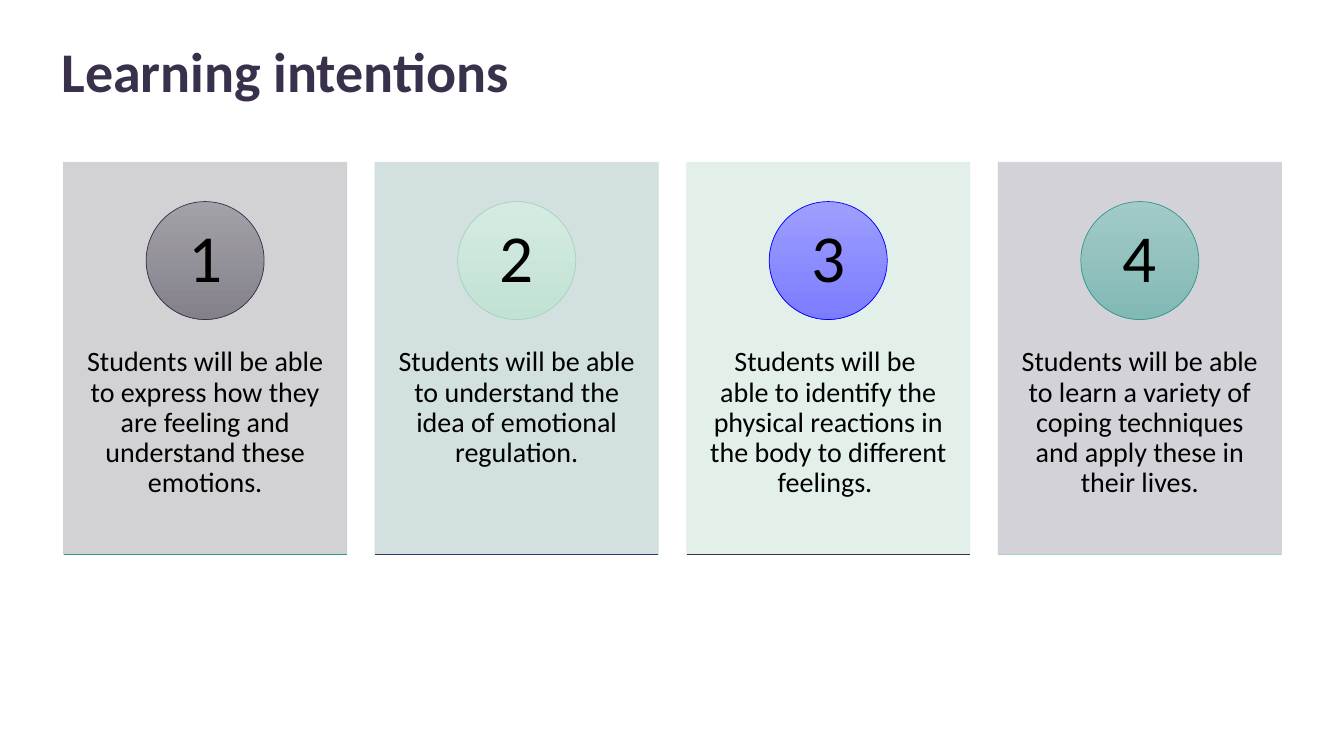
from dataclasses import dataclass

from lxml import etree
from pptx import Presentation
from pptx.dml.color import RGBColor
from pptx.enum.shapes import MSO_CONNECTOR, MSO_SHAPE
from pptx.enum.text import MSO_ANCHOR, MSO_AUTO_SIZE, PP_ALIGN
from pptx.oxml.ns import qn
from pptx.util import Inches, Pt

OVAL, RECT = MSO_SHAPE.OVAL, MSO_SHAPE.RECTANGLE
STRAIGHT = MSO_CONNECTOR.STRAIGHT
TOP, MIDDLE = MSO_ANCHOR.TOP, MSO_ANCHOR.MIDDLE
LEFT, CENTER = PP_ALIGN.LEFT, PP_ALIGN.CENTER
NO_AUTOFIT = MSO_AUTO_SIZE.NONE


@dataclass(frozen=True)
class Tone:
    top: str
    bottom: str
    line: str


@dataclass(frozen=True)
class Theme:
    font: str = "Calibri"
    title_color: str = "39304C"
    text_color: str = "000000"
    title_size: int = 40
    number_size: int = 48
    body_size: int = 20
    line_width: float = 0.5
    slate: Tone = Tone("A3A1A8", "84818B", "39304C")
    mint: Tone = Tone("D5EBE1", "C1E2D4", "A4D3BF")
    blue: Tone = Tone("9E9EFF", "7C7CFF", "0000FF")
    teal: Tone = Tone("A2CAC7", "82B9B5", "369691")
    violet: Tone = Tone("A6A1B4", "87819C", "45326C")


@dataclass(frozen=True)
class Card:
    text: str
    fill: str
    badge: Tone
    base: Tone


THEME = Theme()
CARDS = [
    Card("Students will be able to express how they are feeling and understand these emotions.",
         "CECDD0", THEME.slate, THEME.teal),
    Card("Students will be able to understand the idea of emotional regulation.",
         "CEDDDC", THEME.mint, THEME.violet),
    Card("Students will be \nable to identify the physical reactions in the body to different feelings. ",
         "E0EFE8", THEME.blue, THEME.slate),
    Card("Students will be able to learn a variety of coping techniques and apply these in their lives.",
         "CFCED4", THEME.teal, THEME.mint),
]

# Card grid, in inches
CARD_LEFT, CARD_TOP, CARD_W, CARD_H, PITCH = 0.63, 1.61, 2.81, 3.89, 3.09
BADGE_TOP, BADGE_SIZE = 2.0, 1.17
BODY_TOP, BODY_H = 3.09, 2.33


def rgb(value: str) -> RGBColor:
    return RGBColor.from_string(value)


def write(tf, text: str, size: int, color: str, anchor=TOP, align=CENTER,
          inset: tuple = (0.1, 0.05), bold: bool = False) -> None:
    side, end = (Inches(v) for v in inset)
    frame = {"word_wrap": True, "auto_size": NO_AUTOFIT, "vertical_anchor": anchor,
             "margin_left": side, "margin_right": side,
             "margin_top": end, "margin_bottom": end}
    for name, value in frame.items():
        setattr(tf, name, value)
    p = tf.paragraphs[0]
    p.text, p.alignment, p.line_spacing = text, align, 0.9
    for r in p.runs:
        for name, value in {"name": THEME.font, "size": Pt(size), "bold": bold}.items():
            setattr(r.font, name, value)
        r.font.color.rgb = rgb(color)


def add_panel(slide, x: float, color: str):
    sp = slide.shapes.add_shape(RECT, Inches(x), Inches(CARD_TOP), Inches(CARD_W), Inches(CARD_H))
    sp.shadow.inherit = False
    sp.fill.solid()
    sp.fill.fore_color.rgb = rgb(color)
    sp.line.color.rgb = rgb(color)
    sp.line.width = Pt(THEME.line_width)
    # 90% opacity for fill and outline
    for clr in sp._element.spPr.iter(qn("a:srgbClr")):
        etree.SubElement(clr, qn("a:alpha")).set("val", "90000")
    return sp


def add_badge(slide, x: float, number: int, tone: Tone) -> None:
    sp = slide.shapes.add_shape(OVAL, Inches(x + (CARD_W - BADGE_SIZE) / 2), Inches(BADGE_TOP),
                                Inches(BADGE_SIZE), Inches(BADGE_SIZE))
    sp.shadow.inherit = False
    sp.fill.gradient()
    sp.fill.gradient_angle = 270
    for stop, color in zip(sp.fill.gradient_stops, (tone.top, tone.bottom)):
        stop.color.rgb = rgb(color)
    sp.line.color.rgb = rgb(tone.line)
    sp.line.width = Pt(THEME.line_width)
    write(sp.text_frame, str(number), THEME.number_size, THEME.text_color,
          anchor=MIDDLE, inset=(0.09, 0.01))


def add_base_line(slide, x: float, tone: Tone) -> None:
    y = Inches(CARD_TOP + CARD_H)
    line = slide.shapes.add_connector(STRAIGHT, Inches(x), y, Inches(x + CARD_W), y)
    line.line.color.rgb = rgb(tone.line)
    line.line.width = Pt(THEME.line_width)
    etree.SubElement(line._element.spPr, qn("a:effectLst"))


def add_card(slide, index: int, card: Card) -> None:
    x = CARD_LEFT + index * PITCH
    add_panel(slide, x, card.fill)
    body = slide.shapes.add_textbox(Inches(x), Inches(BODY_TOP), Inches(CARD_W), Inches(BODY_H))
    write(body.text_frame, card.text, THEME.body_size, THEME.text_color, inset=(0.22, 0.36))
    add_badge(slide, x, index + 1, card.badge)
    add_base_line(slide, x, card.base)


def main() -> None:
    prs = Presentation()
    prs.slide_width, prs.slide_height = Inches(13.33), Inches(7.5)
    slide = prs.slides.add_slide(prs.slide_layouts[5])

    # Title
    title = slide.shapes.title
    box = {"left": 0.51, "top": 0.4, "width": 11.5, "height": 0.68}
    for name, value in box.items():
        setattr(title, name, Inches(value))
    write(title.text_frame, "Learning intentions", THEME.title_size, THEME.title_color,
          anchor=MIDDLE, align=LEFT, bold=True)

    # Numbered cards
    for index, card in enumerate(CARDS):
        add_card(slide, index, card)

    prs.save("out.pptx")


if __name__ == "__main__":
    main()
